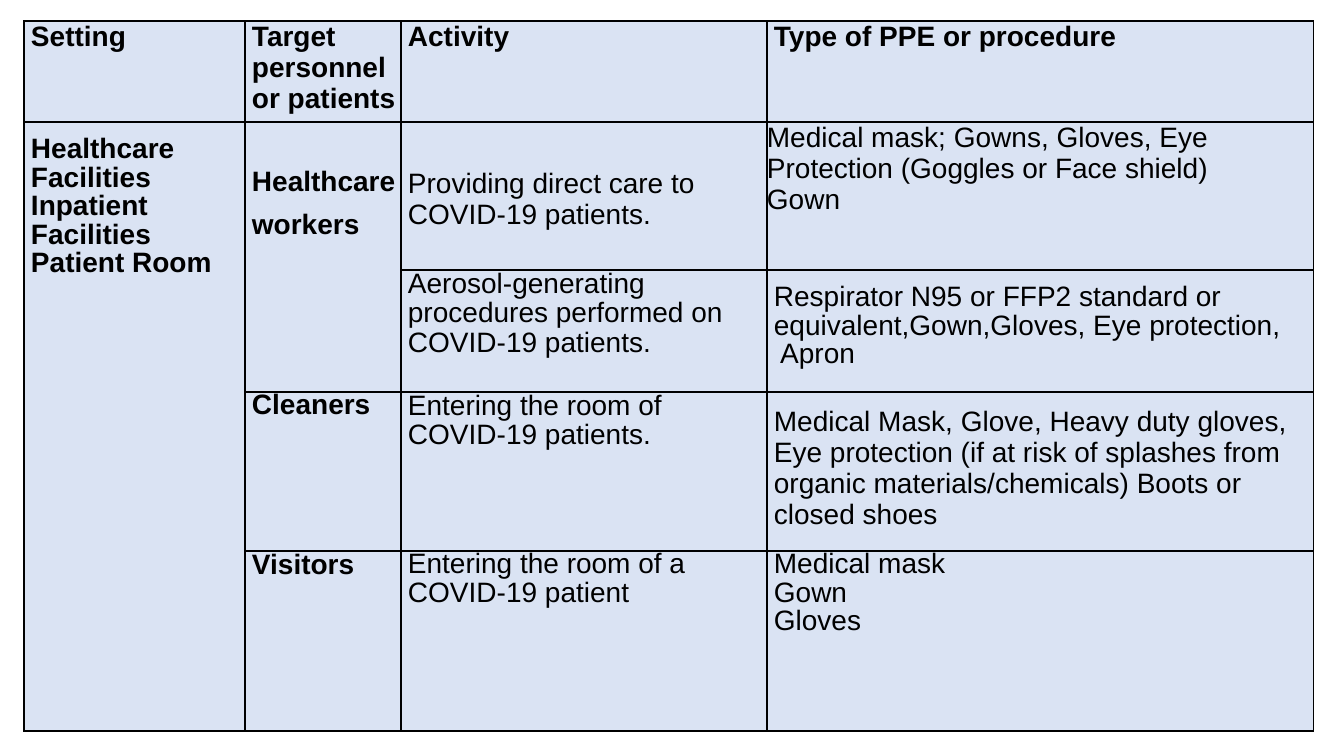
from dataclasses import dataclass

from lxml.etree import SubElement
from pptx import Presentation
from pptx.dml.color import RGBColor
from pptx.enum.text import MSO_ANCHOR as Anchor
from pptx.oxml.ns import qn
from pptx.util import Pt

PX = 914400 / 100.8


def px(length):
    return round(length * PX)


@dataclass(frozen=True)
class Theme:
    font: str = "Arial"
    size: int = 20
    text: str = "000000"
    cell: str = "DAE3F3"
    border: str = "000000"
    border_width: int = 1


@dataclass(frozen=True)
class Entry:
    """Text of one cell: top and left are px, pitch is the line height in points."""
    lines: tuple
    bold: bool = False
    top: int = 0
    left: int = 7
    pitch: float = None


TIGHT = 20.4
COLUMN_WIDTHS = (221, 156, 366, 547)
ROW_HEIGHTS = (101, 148, 122, 159, 180)
HEADINGS = ("Setting", "Target personnel or patients", "Activity",
            "Type of PPE or procedure")
MERGES = (((1, 0), (4, 0)), ((1, 1), (2, 1)))

ENTRIES = {(0, column): Entry((heading,), bold=True)
           for column, heading in enumerate(HEADINGS)}
ENTRIES.update({
    (1, 0): Entry(("Healthcare", "Facilities", "Inpatient", "Facilities", "Patient Room"),
                  bold=True, top=14, pitch=TIGHT),
    (1, 1): Entry(("Healthcare", "workers"), bold=True, top=33, pitch=30.6),
    (1, 2): Entry(("Providing direct care to", "COVID-19 patients."), top=46),
    (1, 3): Entry(("Medical mask; Gowns, Gloves, Eye Protection (Goggles or Face shield)",
                   "Gown"), left=0),
    (2, 2): Entry(("Aerosol-generating", "procedures performed on", "COVID-19 patients."),
                  pitch=21),
    (2, 3): Entry(("Respirator N95 or FFP2 standard or",
                   "equivalent,Gown,Gloves, Eye protection,", " Apron"),
                  top=14, pitch=TIGHT),
    (3, 1): Entry(("Cleaners",), bold=True, pitch=TIGHT),
    (3, 2): Entry(("Entering the room of", "COVID-19 patients."), pitch=21),
    (3, 3): Entry(("Medical Mask, Glove, Heavy duty gloves,",
                   "Eye protection (if at risk of splashes from organic "
                   "materials/chemicals) Boots or closed shoes"), top=14),
    (4, 1): Entry(("Visitors",), bold=True, pitch=21),
    (4, 2): Entry(("Entering the room of a", "COVID-19 patient"), pitch=TIGHT),
    (4, 3): Entry(("Medical mask", "Gown", "Gloves"), pitch=TIGHT),
})


class SlideBuilder:
    def __init__(self, slide, theme):
        self.slide = slide
        self.theme = theme

    def add_table(self, left, top, widths, heights):
        frame = self.slide.shapes.add_table(
            len(heights), len(widths), px(left), px(top), px(sum(widths)), px(sum(heights)))
        table = frame.table
        table.first_row = table.horz_banding = False
        for column, width in zip(table.columns, widths):
            column.width = px(width)
        for row, height in zip(table.rows, heights):
            row.height = px(height)
        for cell in table.iter_cells():
            self.style_cell(cell)
        return table

    def style_cell(self, cell):
        properties = cell._tc.get_or_add_tcPr()
        for side in ("lnL", "lnR", "lnT", "lnB"):
            line = SubElement(properties, qn(f"a:{side}"), w=str(Pt(self.theme.border_width)))
            fill = SubElement(line, qn("a:solidFill"))
            SubElement(fill, qn("a:srgbClr"), val=self.theme.border)
        cell.fill.solid()
        cell.fill.fore_color.rgb = RGBColor.from_string(self.theme.cell)

    def write_cell(self, cell, entry):
        layout = {"margin_left": px(entry.left), "margin_top": px(entry.top),
                  "margin_right": 0, "margin_bottom": 0, "vertical_anchor": Anchor.TOP}
        for name, value in layout.items():
            setattr(cell, name, value)
        cell.text = "\n".join(entry.lines)
        style = {"name": self.theme.font, "size": Pt(self.theme.size), "bold": entry.bold}
        for paragraph in cell.text_frame.paragraphs:
            if entry.pitch:
                paragraph.line_spacing = Pt(entry.pitch)
            font = paragraph.runs[0].font
            for name, value in style.items():
                setattr(font, name, value)
            font.color.rgb = RGBColor.from_string(self.theme.text)


def main():
    presentation = Presentation()
    presentation.slide_width, presentation.slide_height = px(1344), px(756)
    slide = presentation.slides.add_slide(presentation.slide_layouts[6])
    builder = SlideBuilder(slide, Theme())
    table = builder.add_table(24, 21, COLUMN_WIDTHS, ROW_HEIGHTS)
    for first, last in MERGES:
        table.cell(*first).merge(table.cell(*last))
    for position, entry in ENTRIES.items():
        builder.write_cell(table.cell(*position), entry)
    presentation.save("out.pptx")


if __name__ == "__main__":
    main()
